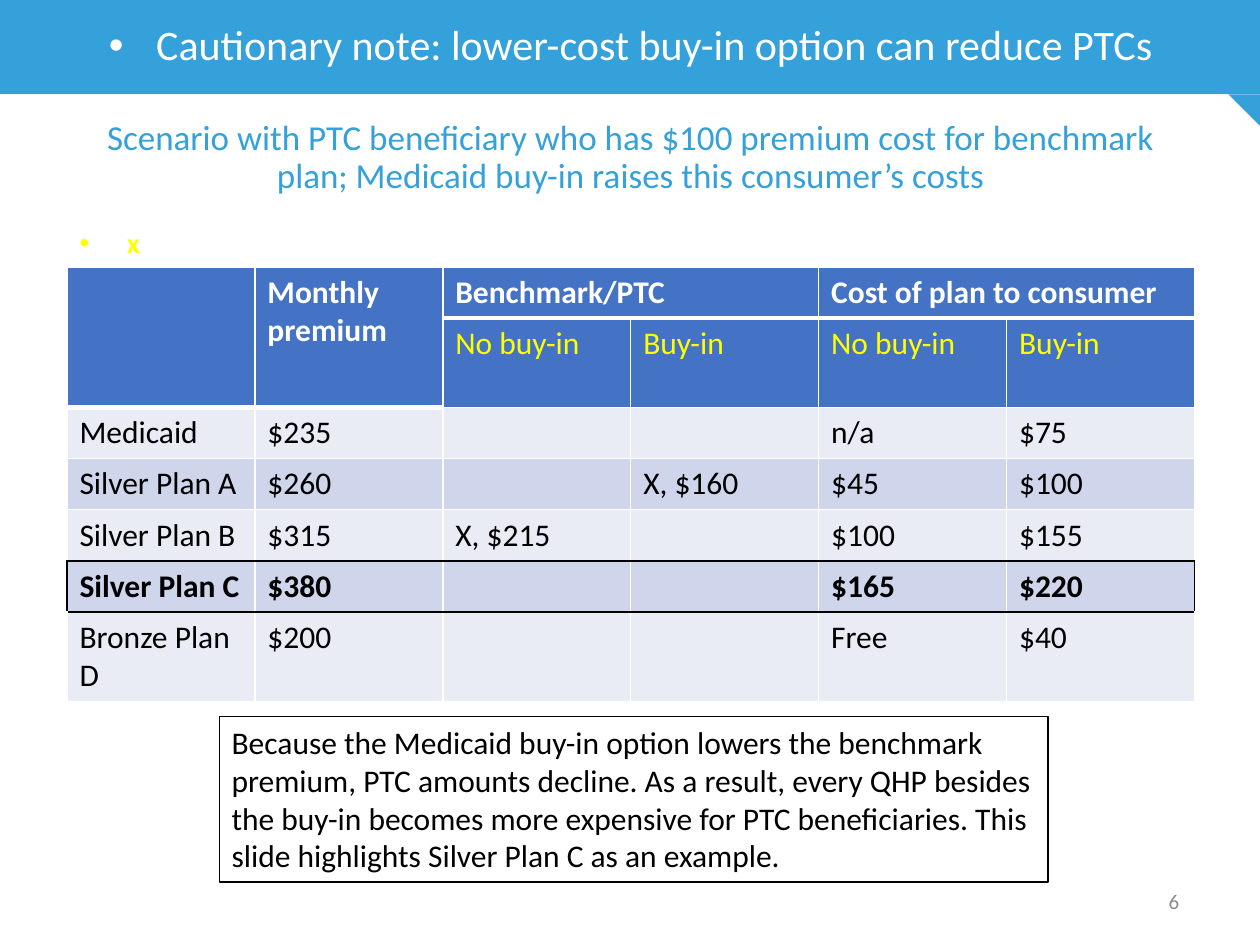
from lxml import etree
from pptx import Presentation
from pptx.dml.color import RGBColor
from pptx.enum import shapes, text
from pptx.oxml import ns
from pptx.util import Cm, Pt

FONT = "Calibri"
SKY = RGBColor(0x34, 0xA1, 0xDA)
HEADER_BLUE = RGBColor(0x44, 0x72, 0xC4)
BANDS = RGBColor(0xE9, 0xEB, 0xF5), RGBColor(0xCF, 0xD5, 0xEA)
WHITE = RGBColor(0xFF, 0xFF, 0xFF)
BLACK = RGBColor(0, 0, 0)
YELLOW = RGBColor(0xFF, 0xFF, 0)
GREY = RGBColor(0x8C, 0x8C, 0x8C)

HEADING = "Cautionary note: lower-cost buy-in option can reduce PTCs"
SCENARIO = ("Scenario with PTC beneficiary who has $100 premium cost for benchmark "
            "plan; Medicaid buy-in raises this consumer’s costs")
MARK = "x"
CONCLUSION = ("Because the Medicaid buy-in option lowers the benchmark premium, PTC amounts "
              "decline. As a result, every QHP besides the buy-in becomes more expensive for "
              "PTC beneficiaries. This slide highlights Silver Plan C as an example.")
PAGE = "6"
PLANS = [
    ("", "Monthly premium", "Benchmark/PTC", "", "Cost of plan to consumer", ""),
    ("", "", "No buy-in", "Buy-in", "No buy-in", "Buy-in"),
    ("Medicaid", "$235", "", "", "n/a", "$75"),
    ("Silver Plan A", "$260", "", "X, $160", "$45", "$100"),
    ("Silver Plan B", "$315", "X, $215", "", "$100", "$155"),
    ("Silver Plan C", "$380", "", "", "$165", "$220"),
    ("Bronze Plan D", "$200", "", "", "Free", "$40"),
]
MERGES = [((0, 0), (1, 0)), ((0, 1), (1, 1)), ((0, 2), (0, 3)), ((0, 4), (0, 5))]
HEADER_ROWS = 2
HIGHLIGHT = 5

SLIDE_W, SLIDE_H = Cm(25.4), Cm(19.05)
LEFT, WIDTH = Cm(1.35), Cm(22.73)
BAND_H = Cm(1.9)
FOLD = Cm(0.64)
ROW_H = Cm(1.03)


def write(frame, words, size, color, bold=False, align=text.PP_ALIGN.LEFT,
          anchor=text.MSO_ANCHOR.MIDDLE):
    frame.word_wrap = True
    frame.vertical_anchor = anchor
    frame.text = words
    paragraph = frame.paragraphs[0]
    paragraph.alignment = align
    font = paragraph.font
    font.name, font.size, font.bold = FONT, Pt(size), bold
    font.color.rgb = color
    return paragraph


def fill_placeholder(holder, box, words, size, color, **style):
    holder.left, holder.top, holder.width, holder.height = box
    holder.text_frame.auto_size = text.MSO_AUTO_SIZE.NONE
    holder.text_frame.text = words
    props = holder.text_frame.paragraphs[0]._p.get_or_add_pPr()
    props.set("marL", "0")
    props.set("indent", "0")
    etree.SubElement(props, ns.qn("a:buNone"))
    paragraph = write(holder.text_frame, words, size, color, **style)
    paragraph.line_spacing = 0.9
    paragraph.space_before = Pt(0)


def add_backdrop(slide, kind, box, depth):
    """Add a sky-blue shape behind the text, at the given depth of the stack."""
    shape = slide.shapes.add_shape(kind, *box)
    shape.shadow.inherit = False
    shape.fill.solid()
    shape.fill.fore_color.rgb = SKY
    shape.line.fill.background()
    slide.shapes._spTree.insert(2 + depth, shape._element)
    return shape


def set_borders(cell, borders):
    props = cell._tc.get_or_add_tcPr()
    for side in "LRTB":
        color, width = borders[side]
        line = etree.SubElement(props, ns.qn("a:ln" + side), w=str(Pt(width)))
        solid = etree.SubElement(line, ns.qn("a:solidFill"))
        etree.SubElement(solid, ns.qn("a:srgbClr"), val=str(color))


def cell_borders(row, col):
    borders = dict.fromkeys("LRTB", (WHITE, 1))
    if row == 0 or (row == 1 and col < 2):
        borders["B"] = (WHITE, 3)
    if row in (HIGHLIGHT - 1, HIGHLIGHT):
        borders["B"] = (BLACK, 1)
    if row in (HIGHLIGHT, HIGHLIGHT + 1):
        borders["T"] = (BLACK, 1)
    if row == HIGHLIGHT and col == 0:
        borders["L"] = (BLACK, 1)
    if row == HIGHLIGHT and col == len(PLANS[0]) - 1:
        borders["R"] = (BLACK, 1)
    return borders


def add_plan_table(slide):
    rows, cols = len(PLANS), len(PLANS[0])
    table = slide.shapes.add_table(rows, cols, LEFT, Cm(5.38), WIDTH, ROW_H * rows).table
    table.first_row = table.horz_banding = False
    for row, values in enumerate(PLANS):
        table.rows[row].height = ROW_H
        for col, value in enumerate(values):
            cell = table.cell(row, col)
            set_borders(cell, cell_borders(row, col))
            cell.fill.solid()
            header = row < HEADER_ROWS
            cell.fill.fore_color.rgb = HEADER_BLUE if header else BANDS[row % 2]
            if value:
                color = (WHITE, YELLOW)[row] if header else BLACK
                write(cell.text_frame, value, 18, color, bold=row in (0, HIGHLIGHT),
                      anchor=text.MSO_ANCHOR.TOP)
    for start, end in MERGES:
        table.cell(*start).merge(table.cell(*end))


def main():
    deck = Presentation()
    deck.slide_width, deck.slide_height = SLIDE_W, SLIDE_H
    slide = deck.slides.add_slide(deck.slide_layouts[3])
    center = text.PP_ALIGN.CENTER
    scenario, mark, heading = slide.placeholders

    add_backdrop(slide, shapes.MSO_SHAPE.RECTANGLE, (0, 0, SLIDE_W, BAND_H), 0)
    fold = add_backdrop(slide, shapes.MSO_SHAPE.RIGHT_TRIANGLE,
                        (SLIDE_W - FOLD, BAND_H, FOLD, FOLD), 1)
    fold.rotation = 180

    fill_placeholder(scenario, (LEFT, Cm(1.96), WIDTH, Cm(2.44)), SCENARIO, 20, SKY,
                     align=center)
    fill_placeholder(mark, (LEFT, Cm(4.47), WIDTH, Cm(0.91)), MARK, 16, YELLOW, bold=True)
    fill_placeholder(heading, (LEFT, 0, WIDTH, BAND_H), HEADING, 24, WHITE, align=center)

    add_plan_table(slide)

    page = slide.shapes.add_textbox(Cm(22.94), Cm(17.65), Cm(1.45), Cm(1.02))
    write(page.text_frame, PAGE, 12, GREY, align=center)

    conclusion = slide.shapes.add_shape(shapes.MSO_SHAPE.RECTANGLE,
                                        Cm(4.42), Cm(14.45), Cm(16.71), Cm(3.33))
    conclusion.shadow.inherit = False
    conclusion.fill.background()
    conclusion.line.color.rgb = BLACK
    conclusion.line.width = Pt(0.75)
    write(conclusion.text_frame, CONCLUSION, 18, BLACK, anchor=text.MSO_ANCHOR.TOP)

    deck.save("out.pptx")


if __name__ == "__main__":
    main()
